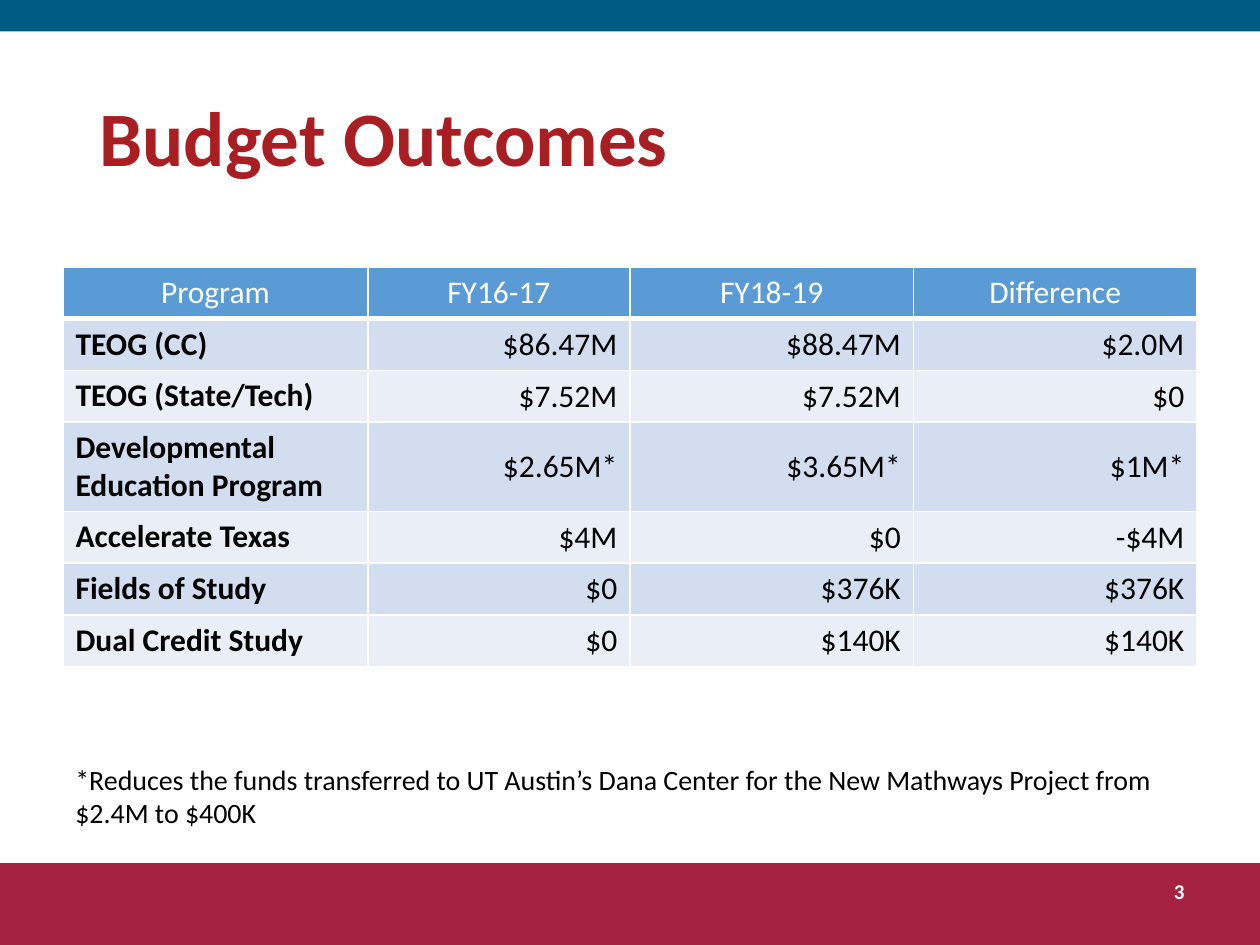
import pptx
import pptx.util
import pptx.dml.color
import pptx.enum.shapes
import pptx.enum.text
import pptx.oxml
import pptx.oxml.ns

Inches = pptx.util.Inches
Pt = pptx.util.Pt
RGBColor = pptx.dml.color.RGBColor
ALIGN = pptx.enum.text.PP_ALIGN
ANCHOR = pptx.enum.text.MSO_ANCHOR

TEAL = RGBColor(0x00, 0x5B, 0x83)
MAROON = RGBColor(0xA6, 0x22, 0x42)
RED = RGBColor(0xA9, 0x1E, 0x22)
BLUE = RGBColor(0x5B, 0x9B, 0xD5)
BAND = RGBColor(0xD2, 0xDE, 0xEF)
PALE = RGBColor(0xEA, 0xEF, 0xF7)
WHITE = RGBColor(0xFF, 0xFF, 0xFF)
BLACK = RGBColor(0x00, 0x00, 0x00)

WIDTHS = [2.42, 2.08, 2.25, 2.25]
ROW_HEIGHT = 0.41
BUDGET = [
    ["Program", "FY16-17", "FY18-19", "Difference"],
    ["TEOG (CC)", "$86.47M", "$88.47M", "$2.0M"],
    ["TEOG (State/Tech)", "$7.52M", "$7.52M", "$0"],
    ["Developmental Education Program", "$2.65M*", "$3.65M*", "$1M*"],
    ["Accelerate Texas", "$4M", "$0", "-$4M"],
    ["Fields of Study", "$0", "$376K", "$376K"],
    ["Dual Credit Study", "$0", "$140K", "$140K"],
]
NOTE = ("*Reduces the funds transferred to UT Austin’s Dana Center "
        "for the New Mathways Project from $2.4M to $400K")


def write(frame, text, size=18, color=BLACK, bold=False, align=ALIGN.LEFT):
    frame.word_wrap = True
    par = frame.paragraphs[0]
    par.alignment = align
    run = par.add_run()
    run.text = text
    run.font.name = "Calibri"
    run.font.size = Pt(size)
    run.font.bold = bold
    run.font.color.rgb = color
    return par


def add_bar(slide, top, height, color):
    bar = slide.shapes.add_shape(
        pptx.enum.shapes.MSO_SHAPE.RECTANGLE,
        0, Inches(top), Inches(10), Inches(height))
    bar.shadow.inherit = False
    bar.fill.solid()
    bar.fill.fore_color.rgb = color
    bar.line.fill.background()


def add_title(slide, text):
    title = slide.shapes.title
    title.left, title.top = Inches(0.69), Inches(0.4)
    title.width, title.height = Inches(8.62), Inches(1.45)
    title.text_frame.vertical_anchor = ANCHOR.MIDDLE
    par = write(title.text_frame, text, size=44, color=RED, bold=True)
    par.line_spacing = 0.9


def add_text(slide, text, left, top, width, height, **style):
    box = slide.shapes.add_textbox(
        Inches(left), Inches(top), Inches(width), Inches(height))
    write(box.text_frame, text, **style)


def set_edges(cell, bottom):
    """Draw white cell borders, 1 pt except for the bottom one."""
    props = cell._tc.get_or_add_tcPr()
    for side, width in (("L", 1), ("R", 1), ("T", 1), ("B", bottom)):
        props.append(pptx.oxml.parse_xml(
            f'<a:ln{side} {pptx.oxml.ns.nsdecls("a")} w="{Pt(width)}">'
            f'<a:solidFill><a:srgbClr val="{WHITE}"/></a:solidFill>'
            f'</a:ln{side}>'))


def fill_cell(cell, text, row, col):
    """Style a cell as header, program name or amount by its place."""
    set_edges(cell, bottom=3 if row == 0 else 1)
    cell.fill.solid()
    if row == 0:
        cell.fill.fore_color.rgb = BLUE
        write(cell.text_frame, text, color=WHITE, align=ALIGN.CENTER)
        return
    cell.fill.fore_color.rgb = BAND if row % 2 else PALE
    if col == 0:
        write(cell.text_frame, text, bold=True)
    else:
        cell.vertical_anchor = ANCHOR.MIDDLE
        write(cell.text_frame, text, align=ALIGN.RIGHT)


def add_budget(slide):
    table = slide.shapes.add_table(
        len(BUDGET), len(WIDTHS), Inches(0.5), Inches(2.12),
        Inches(sum(WIDTHS)), Inches(ROW_HEIGHT * len(BUDGET))).table
    table.horz_banding = False
    for column, width in zip(table.columns, WIDTHS):
        column.width = Inches(width)
    for row, texts in enumerate(BUDGET):
        table.rows[row].height = Inches(ROW_HEIGHT)
        for col, text in enumerate(texts):
            fill_cell(table.cell(row, col), text, row, col)


def main():
    deck = pptx.Presentation()
    deck.slide_width, deck.slide_height = Inches(10), Inches(7.5)
    slide = deck.slides.add_slide(deck.slide_layouts[5])
    add_bar(slide, 6.85, 0.65, MAROON)
    add_bar(slide, 0, 0.25, TEAL)
    add_title(slide, "Budget Outcomes")
    add_budget(slide)
    add_text(slide, NOTE, 0.5, 6, 9, 0.64, size=16)
    add_text(slide, "3", 7.75, 6.92, 1.75, 0.3,
             size=12, color=WHITE, bold=True, align=ALIGN.RIGHT)
    deck.save("out.pptx")


if __name__ == "__main__":
    main()
